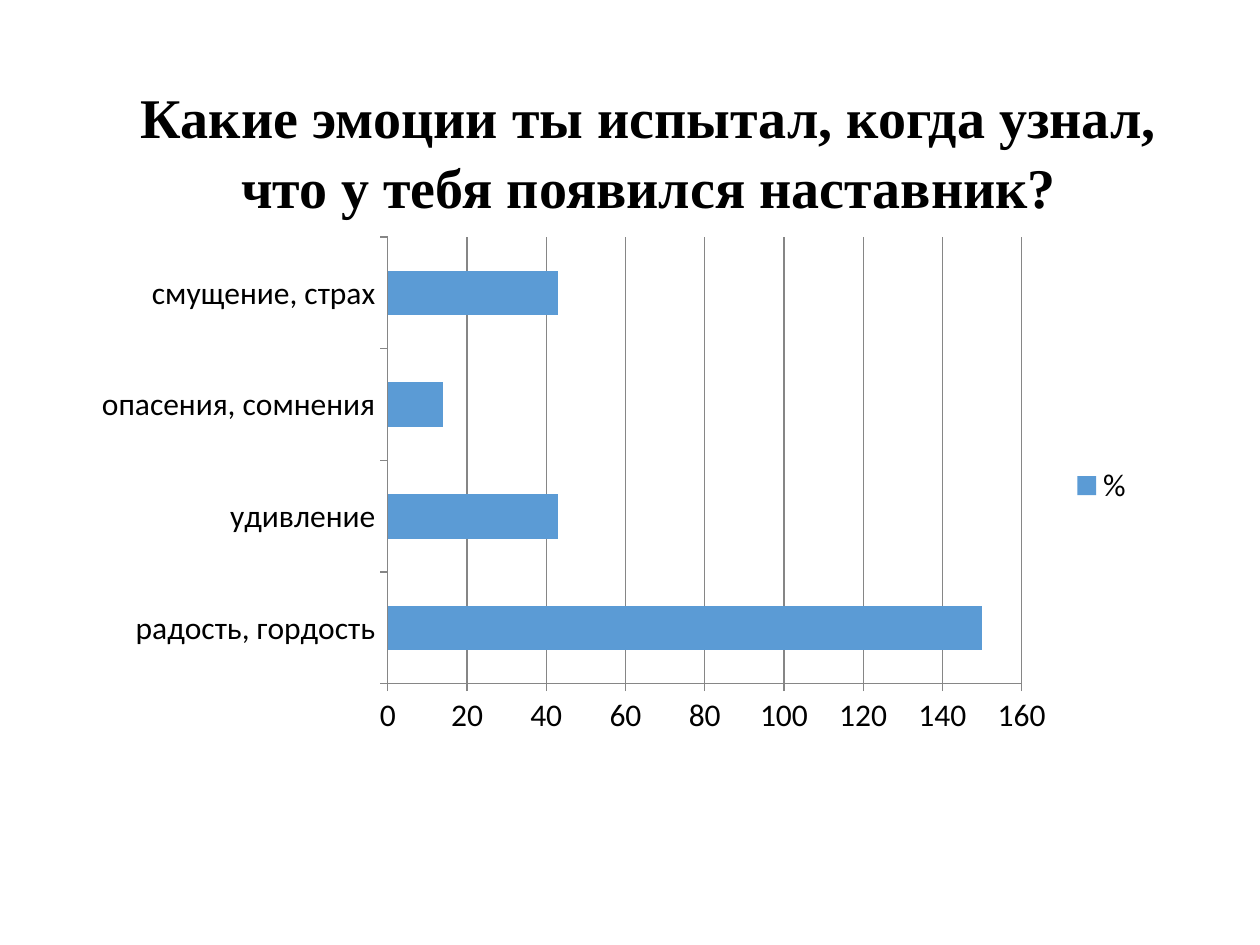
from dataclasses import dataclass

from pptx import Presentation
from pptx import util as u
from pptx.chart.data import CategoryChartData
from pptx.dml.color import RGBColor
from pptx.enum import chart as ch
from pptx.enum import text

WIDTH, HEIGHT = u.Inches(10), u.Inches(7.5)

TITLE = "Какие эмоции ты испытал, когда узнал, что у тебя появился наставник?"
ANSWERS = {
    "радость, гордость": 150,
    "удивление": 43,
    "опасения, сомнения": 14,
    "смущение, страх": 43,
}


@dataclass(frozen=True)
class Theme:
    ink: RGBColor = RGBColor(0, 0, 0)
    bar: RGBColor = RGBColor(0x5B, 0x9B, 0xD5)
    grid: RGBColor = RGBColor(0x86, 0x86, 0x86)
    title_font: str = "Times New Roman"
    chart_font: str = "Calibri"
    title_size: u.Pt = u.Pt(32)
    chart_size: u.Pt = u.Pt(18)
    hairline: u.Pt = u.Pt(0.75)


THEME = Theme()


def box(x, y, w, h):
    """Turn shares of the slide's size into left, top, width, height."""
    return int(x * WIDTH), int(y * HEIGHT), int(w * WIDTH), int(h * HEIGHT)


def set_font(font, name, size, bold=False):
    font.name, font.size, font.bold = name, size, bold
    font.color.rgb = THEME.ink


def set_line(line):
    line.color.rgb = THEME.grid
    line.width = THEME.hairline


def add_title(s, title, place):
    sp = s.shapes.title
    sp.left, sp.top, sp.width, sp.height = place
    tf = sp.text_frame
    tf.text = title
    tf.word_wrap = True
    tf.auto_size = text.MSO_AUTO_SIZE.NONE
    tf.vertical_anchor = text.MSO_ANCHOR.TOP
    p = tf.paragraphs[0]
    p.alignment = text.PP_ALIGN.CENTER
    p.line_spacing = 1.05
    set_font(p.font, THEME.title_font, THEME.title_size, bold=True)


def format_axis(axis, gridlines):
    axis.has_major_gridlines = gridlines
    axis.major_tick_mark = ch.XL_TICK_MARK.OUTSIDE
    axis.minor_tick_mark = ch.XL_TICK_MARK.NONE
    set_line(axis.format.line)
    if gridlines:
        set_line(axis.major_gridlines.format.line)


def add_bar_chart(s, name, values, place):
    data = CategoryChartData()
    data.categories = list(values)
    data.add_series(name, list(values.values()))
    chart = s.shapes.add_chart(ch.XL_CHART_TYPE.BAR_STACKED, *place, data).chart
    set_font(chart.font, THEME.chart_font, THEME.chart_size)
    chart.has_title = False
    chart.has_legend = True
    chart.legend.position = ch.XL_LEGEND_POSITION.RIGHT
    chart.legend.include_in_layout = False

    plot = chart.plots[0]
    plot.gap_width, plot.overlap = 150, 100
    plot.vary_by_categories = False
    fill = plot.series[0].format.fill
    fill.solid()
    fill.fore_color.rgb = THEME.bar

    format_axis(chart.category_axis, gridlines=False)
    format_axis(chart.value_axis, gridlines=True)
    chart.value_axis.minimum_scale = 0
    chart.value_axis.maximum_scale = 160
    chart.value_axis.major_unit = 20


def main():
    prs = Presentation()
    prs.slide_width, prs.slide_height = WIDTH, HEIGHT
    s = prs.slides.add_slide(prs.slide_layouts[5])
    add_title(s, TITLE, box(0.064, 0.077, 0.902, 0.23))
    add_bar_chart(s, "%", ANSWERS, box(0.064, 0.24, 0.846, 0.548))
    prs.save("out.pptx")


if __name__ == "__main__":
    main()
